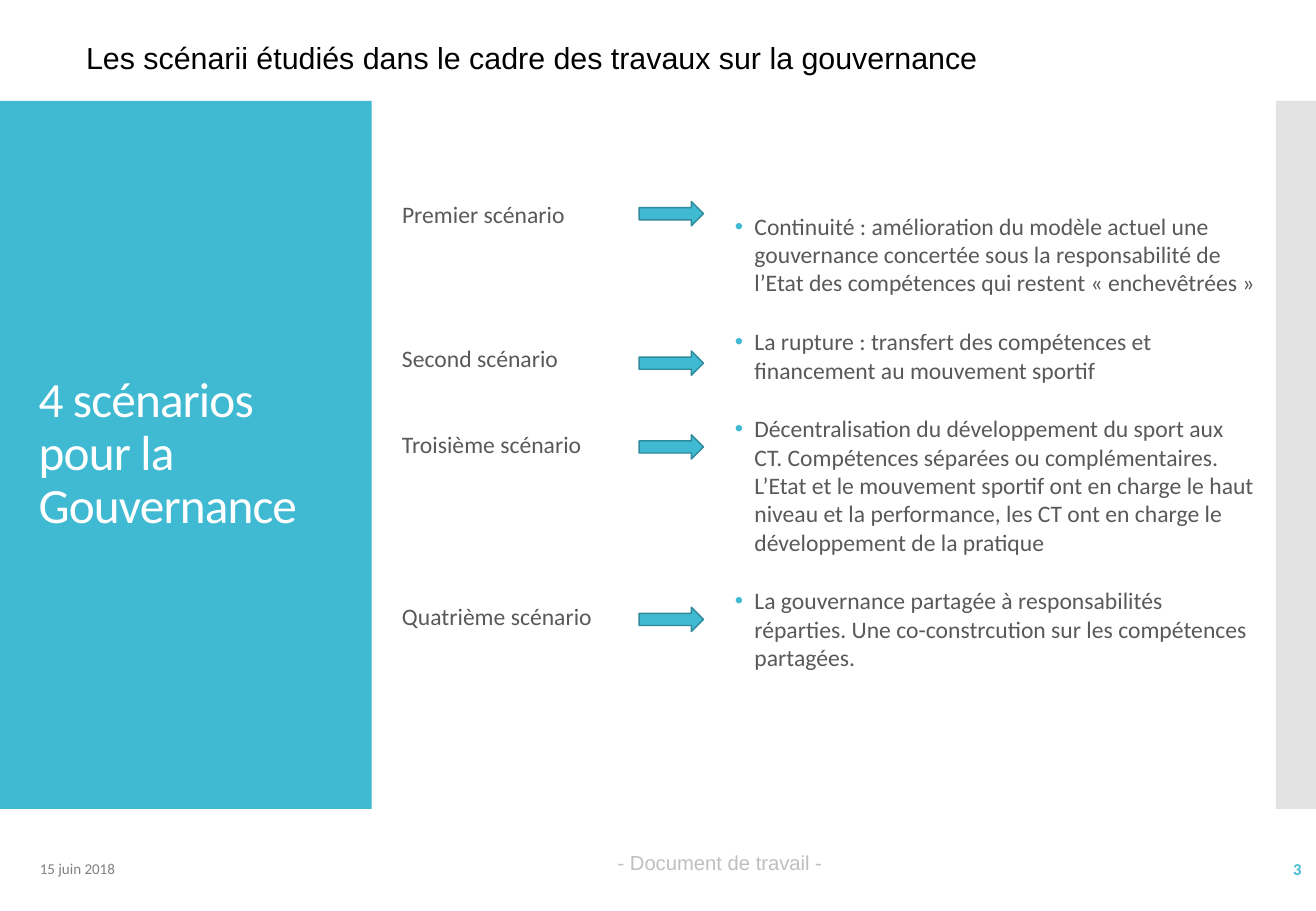
from lxml import etree
from pptx import Presentation
from pptx import util as u
from pptx.dml.color import RGBColor
from pptx.enum import shapes, text
from pptx.oxml.ns import qn

PX = 9144  # EMU per px, 100 px to the inch
COLORS = {
    "teal": "40BAD2", "teal_dark": "2F8A9B", "band": "C8C8C8", "body": "595959",
    "date": "808080", "footer": "BFBFBF", "white": "FFFFFF", "black": "000000",
}
LEFT, CENTER, RIGHT = text.PP_ALIGN.LEFT, text.PP_ALIGN.CENTER, text.PP_ALIGN.RIGHT
TOP, MIDDLE = text.MSO_ANCHOR.TOP, text.MSO_ANCHOR.MIDDLE


def color(name):
    return RGBColor.from_string(COLORS[name])


class Deck:
    def __init__(self, width, height, font):
        self.prs = Presentation()
        self.prs.slide_width, self.prs.slide_height = width * PX, height * PX
        self.font = font
        self.s = self.prs.slides.add_slide(self.prs.slide_layouts[6])

    def shape(self, kind, box, fill, line=None, alpha=None):
        sp = self.s.shapes.add_shape(kind, *(v * PX for v in box))
        sp.shadow.inherit = False
        sp.fill.solid()
        sp.fill.fore_color.rgb = color(fill)
        if alpha:
            clr = sp.fill._xPr.find(qn("a:solidFill"))[0]
            etree.SubElement(clr, qn("a:alpha")).set("val", str(alpha * 1000))
        if line:
            sp.line.color.rgb = color(line)
            sp.line.width = u.Pt(0.85)
        else:
            sp.line.fill.background()
        return sp

    def text(self, box, paragraphs, size, fill, font=None, bold=False,
             align=LEFT, anchor=TOP, spacing=None, before=0, track=None, bullet=None):
        tf = self.s.shapes.add_textbox(*(v * PX for v in box)).text_frame
        tf.word_wrap = True
        tf.vertical_anchor = anchor
        for i, words in enumerate(paragraphs):
            p = tf.add_paragraph() if i else tf.paragraphs[0]
            p.alignment = align
            p.space_before = u.Pt(before)
            if spacing:
                p.line_spacing = spacing
            if bullet:
                self.bullet(p, bullet)
            r = p.add_run()
            r.text = words
            r.font.name, r.font.size, r.font.bold = font or self.font, u.Pt(size), bold
            r.font.color.rgb = color(fill)
            if track:
                r.font._element.set("spc", str(int(track * 100)))

    def bullet(self, p, fill, indent=16):
        pPr = p._p.get_or_add_pPr()
        pPr.set("marL", str(indent * PX))
        pPr.set("indent", str(-indent * PX))
        clr = etree.SubElement(pPr, qn("a:buClr"))
        etree.SubElement(clr, qn("a:srgbClr")).set("val", COLORS[fill])
        etree.SubElement(pPr, qn("a:buFont")).set("typeface", "Arial")
        etree.SubElement(pPr, qn("a:buChar")).set("char", "•")


# Label, label top, label width, arrow top, description
SCENARIOS = [
    ("Premier scénario", 160, 161, 166,
     "Continuité : amélioration du modèle actuel une gouvernance concertée sous la "
     "responsabilité de l’Etat des compétences qui restent « enchevêtrées »"),
    ("Second scénario", 278, 157, 289,
     "La rupture : transfert des compétences et financement au mouvement sportif"),
    ("Troisième scénario", 349, 176, 358,
     "Décentralisation du développement du sport aux CT. Compétences séparées ou "
     "complémentaires. L’Etat et le mouvement sportif ont en charge le haut niveau et la "
     "performance, les CT ont en charge le développement de la pratique"),
    ("Quatrième scénario", 491, 184, 500,
     "La gouvernance partagée à responsabilités réparties. Une co-constrcution sur les "
     "compétences partagées."),
]


def main():
    d = Deck(1083, 750, "Calibri")

    # Side panels
    d.shape(shapes.MSO_SHAPE.RECTANGLE, (0, 83, 306, 583), "teal")
    d.shape(shapes.MSO_SHAPE.RECTANGLE, (1050, 83, 33, 583), "band", alpha=50)

    # Headings
    d.text((61, 27, 968, 40),
           ["Les scénarii étudiés dans le cadre des travaux sur la gouvernance"],
           18, "black", font="Arial")
    d.text((22, 123, 262, 503), ["4 scénarios pour la Gouvernance"], 29.2, "white",
           anchor=MIDDLE, spacing=0.9, track=-0.5)

    # Scenarios: descriptions, then a label and an arrow each
    d.text((595, 136, 448, 455), [row[-1] for row in SCENARIOS], 14, "body",
           anchor=MIDDLE, before=18, bullet="teal")
    for label, top, width, arrow_top, _ in SCENARIOS:
        d.shape(shapes.MSO_SHAPE.RIGHT_ARROW, (526, arrow_top, 53, 20), "teal", "teal_dark")
        d.text((321, top, width, 34), [label], 14, "body")

    # Footer
    d.text((23, 695, 244, 40), ["15 juin 2018"], 8.9, "date", anchor=MIDDLE)
    d.text((368, 695, 449, 30), ["- Document de travail -"], 12, "footer",
           font="Arial", align=CENTER)
    d.text((945, 695, 136, 40), ["3"], 9.8, "teal", bold=True, align=RIGHT, anchor=MIDDLE)

    d.prs.save("out.pptx")


if __name__ == "__main__":
    main()
